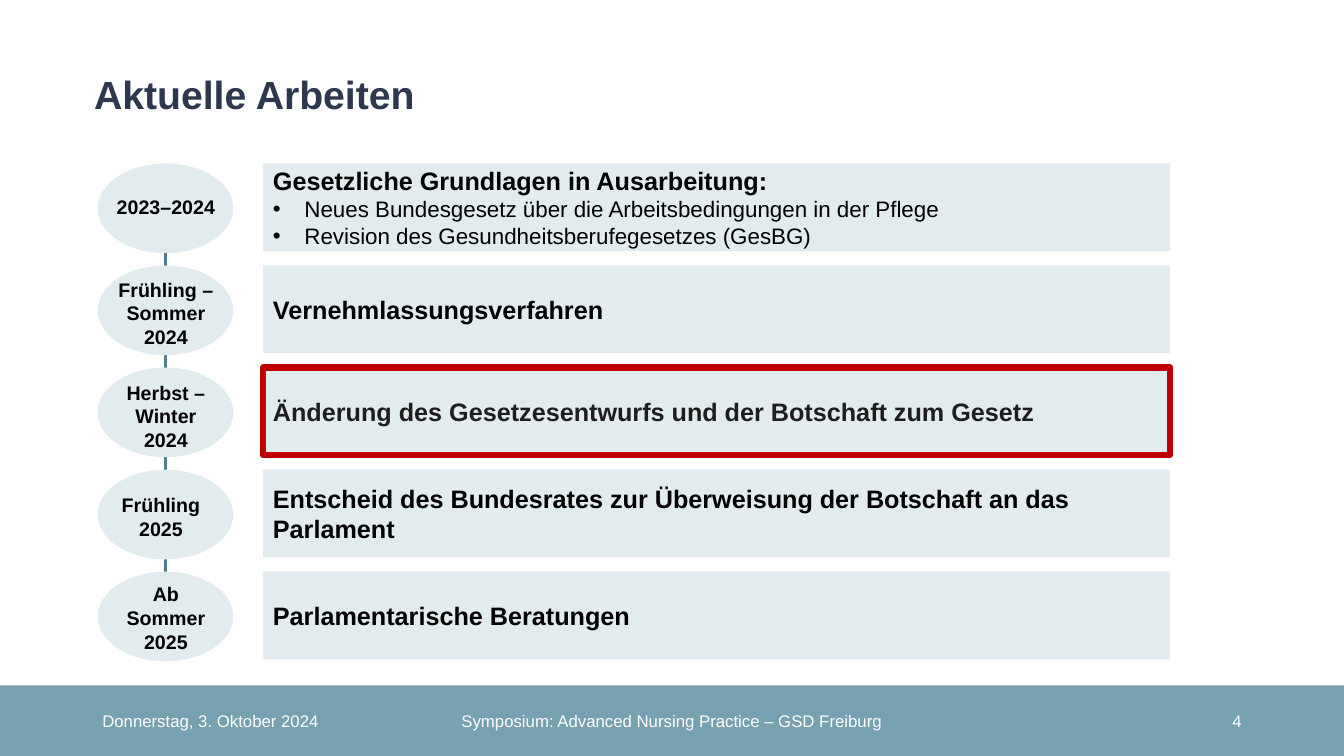
from pptx import Presentation
from pptx.util import Pt
from pptx.dml.color import RGBColor
from pptx.enum.shapes import MSO_CONNECTOR, MSO_SHAPE
from pptx.enum.text import MSO_ANCHOR, MSO_AUTO_SIZE, PP_ALIGN
from lxml import etree

RECT, OVAL = MSO_SHAPE.RECTANGLE, MSO_SHAPE.OVAL
LINE = MSO_CONNECTOR.STRAIGHT
TOP, MID = MSO_ANCHOR.TOP, MSO_ANCHOR.MIDDLE
LEFT, MIDDLE, RIGHT = PP_ALIGN.LEFT, PP_ALIGN.CENTER, PP_ALIGN.RIGHT
NS = "{http://schemas.openxmlformats.org/drawingml/2006/main}"
HUES = {"navy": "2D384F", "foot": "77A0B0", "pale": "E2EBEE", "spine": "517C8D",
        "red": "C00000", "black": "000000", "dark": "1E1E1E", "white": "FFFFFF"}
COLS = {name: RGBColor.from_string(code) for name, code in HUES.items()}


def add_form(kind, x, y, w, h, fill):
    form = slide.shapes.add_shape(kind, Pt(x), Pt(y), Pt(w), Pt(h))
    form.shadow.inherit = False
    form.fill.solid()
    form.fill.fore_color.rgb = COLS[fill]
    form.line.fill.background()
    return form


def write(shape, lines, size, tint, bold=True, align=LEFT, anchor=MID):
    frame = shape.text_frame
    frame.word_wrap = True
    frame.auto_size = MSO_AUTO_SIZE.NONE
    frame.vertical_anchor = anchor
    frame.text = "\n".join(lines)
    for i, para in enumerate(frame.paragraphs):
        para.alignment = align
        if i:  # lines after the heading are bullets
            props = para._p.get_or_add_pPr()
            props.set("marL", str(Pt(22.5)))
            props.set("indent", str(-Pt(22.5)))
            etree.SubElement(props, NS + "buFont", typeface="Arial")
            etree.SubElement(props, NS + "buChar", char="•")
        para.font.name = "Arial"
        para.font.size = Pt(size - 2 if i else size)
        para.font.bold = bold and i == 0
        para.font.color.rgb = COLS[tint]


deck = Presentation()
deck.slide_width, deck.slide_height = Pt(960), Pt(540)
slide = deck.slides.add_slide(deck.slide_layouts[5])

# Title
title = slide.shapes.title
title.left, title.top, title.width, title.height = Pt(60), Pt(50.4), Pt(850), Pt(30)
write(title, ["Aktuelle Arbeiten"], 28, "navy", anchor=TOP)
title.text_frame.paragraphs[0].line_spacing = 0.9

# Footer
add_form(RECT, 0, 489.6, 960, 50.4, "foot")
notes = [
    (66, 216, LEFT, "Donnerstag, 3. Oktober 2024"),
    (318, 324, MIDDLE, "Symposium: Advanced Nursing Practice – GSD Freiburg"),
    (678, 216, RIGHT, "4"),
]
for x, w, align, text in notes:
    box = slide.shapes.add_textbox(Pt(x), Pt(500.4), Pt(w), Pt(28.8))
    write(box, [text], 12, "white", bold=False, align=align)

# Timeline spine, behind the ovals
spine = slide.shapes.add_connector(LINE, Pt(118.2), Pt(180), Pt(118.2), Pt(438))
spine.line.color.rgb = COLS["spine"]
spine.line.width = Pt(2.25)
etree.SubElement(spine._element.spPr, NS + "effectLst")

# Steps: label left, label top within the row, label height, date, bar text
steps = [
    (73.5, 19, 24.5, "2023–2024", [
        "Gesetzliche Grundlagen in Ausarbeitung:",
        "Neues Bundesgesetz über die Arbeitsbedingungen in der Pflege",
        "Revision des Gesundheitsberufegesetzes (GesBG)"]),
    (73.5, 5, 58.3, "Frühling – Sommer 2024", ["Vernehmlassungsverfahren"]),
    (73.5, 5.8, 58.3, "Herbst – Winter 2024",
     ["Änderung des Gesetzesentwurfs und der Botschaft zum Gesetz"]),
    (70, 13.4, 41, "Frühling 2025",
     ["Entscheid des Bundesrates zur Überweisung der Botschaft an das Parlament"]),
    (73.5, 4, 58.3, "Ab Sommer 2025", ["Parlamentarische Beratungen"]),
]
ACTIVE = 2
for i, (x, drop, h, date, lines) in enumerate(steps):
    y = 116.8 + 72.9 * i
    add_form(OVAL, 69.8, y, 96.8, 64, "pale")
    label = slide.shapes.add_textbox(Pt(x), Pt(y + drop), Pt(90), Pt(h))
    write(label, [date], 14, "black", align=MIDDLE, anchor=TOP)
    bar = add_form(RECT, 187.9, y, 648, 62.6, "pale")
    write(bar, lines, 18, "dark" if i == ACTIVE else "black")
    if i == ACTIVE:
        bar.line.color.rgb = COLS["red"]
        bar.line.width = Pt(4.5)

deck.save("out.pptx")
